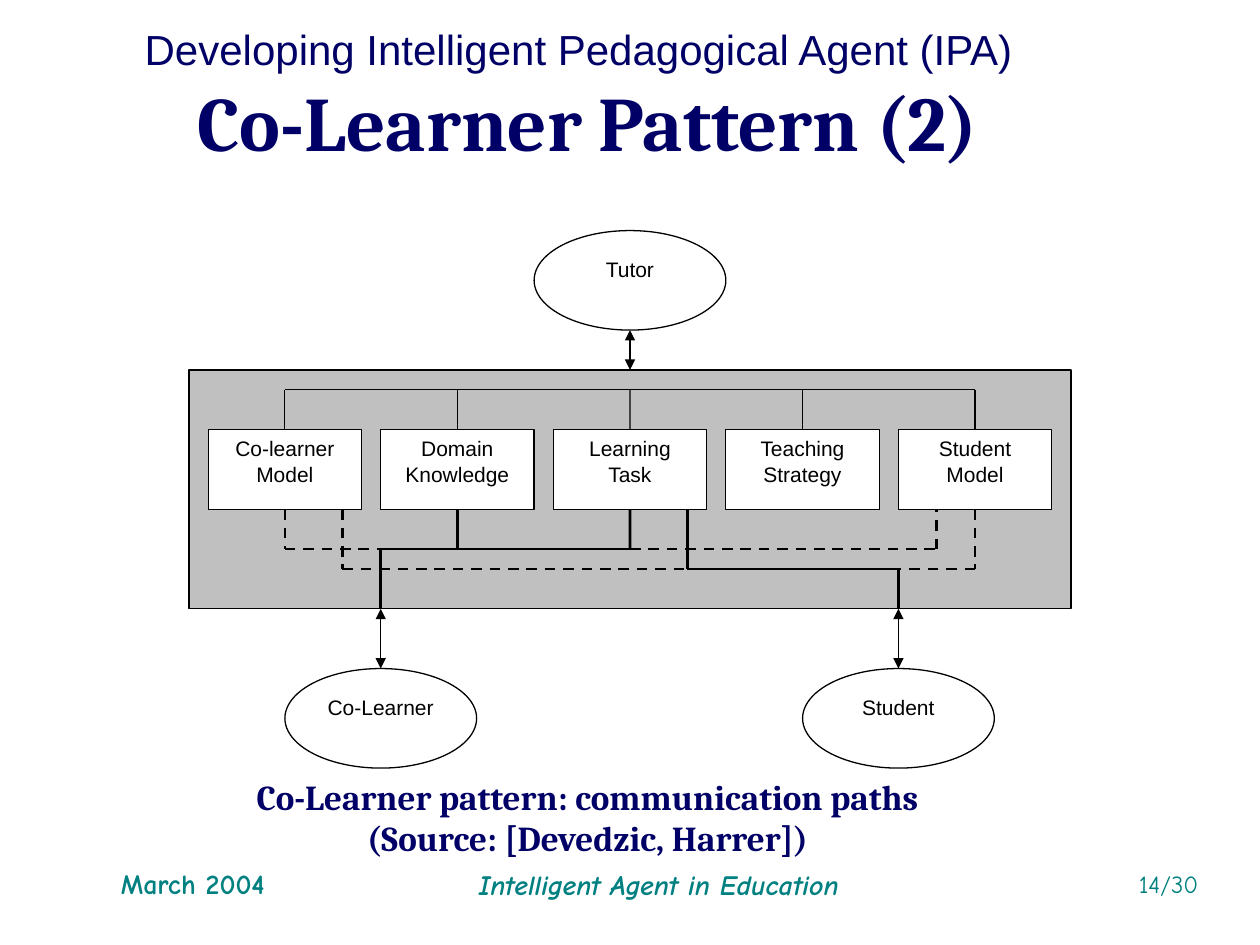
from dataclasses import dataclass
from itertools import pairwise
from typing import Optional

import pptx
import pptx.dml.color
import pptx.enum.dml
import pptx.enum.shapes
import pptx.enum.text
import pptx.util
from lxml import etree

RGBColor = pptx.dml.color.RGBColor
NAVY = RGBColor(0x00, 0x00, 0x66)
TEAL = RGBColor(0x00, 0x80, 0x80)
BLACK = RGBColor(0x00, 0x00, 0x00)
WHITE = RGBColor(0xFF, 0xFF, 0xFF)
GRAY = RGBColor(0xC0, 0xC0, 0xC0)

SHAPE = pptx.enum.shapes.MSO_SHAPE
ALIGN = pptx.enum.text.PP_ALIGN
ANCHOR = pptx.enum.text.MSO_ANCHOR
DRAWING_NS = "http://schemas.openxmlformats.org/drawingml/2006/main"

# Diagram grid: the panel is 46 columns wide, row 0 is the top of the tutor
GRID_LEFT, GRID_TOP = 1.5, 1.83
COL, ROW = 7 / 46, 0.158
BOX_TOP, BOX_BOTTOM, BOX_COLS, BOX_PITCH = 10, 14, 8, 9
PANEL_TOP, PANEL_BOTTOM, BUS = 7, 19, 8
ACTOR_COLS, ACTOR_ROWS, ACTOR_TOP = 10, 5, 22
COLEARNER, TUTOR, STUDENT = 10, 23, 37  # centre columns of the actors


@dataclass
class Style:
    size: float
    font: str = "Arial"
    color: RGBColor = BLACK
    bold: bool = False
    italic: bool = False
    align: ALIGN = ALIGN.CENTER


@dataclass
class Caption:
    lines: list[str]
    box: tuple[float, float, float, float]
    style: Style
    wrap: bool = True
    anchor: ANCHOR = ANCHOR.TOP
    spacing: Optional[float] = None
    gap: float = 0


@dataclass
class Wire:
    points: list[tuple[float, float]]
    dashed: bool = False
    width: float = 1.5
    arrows: bool = False
    begin: Optional[tuple] = None  # shape and connection site
    end: Optional[tuple] = None


def x(col: float) -> int:
    return pptx.util.Inches(GRID_LEFT + col * COL)


def y(row: float) -> int:
    return pptx.util.Inches(GRID_TOP + row * ROW)


def style_paragraph(p, style: Style) -> None:
    p.alignment = style.align
    f = p.font
    f.size, f.name = pptx.util.Pt(style.size), style.font
    f.bold, f.italic = style.bold, style.italic
    f.color.rgb = style.color


def add_caption(slide, cap: Caption) -> None:
    tf = slide.shapes.add_textbox(*map(pptx.util.Inches, cap.box)).text_frame
    tf.word_wrap, tf.vertical_anchor = cap.wrap, cap.anchor
    for i, line in enumerate(cap.lines):
        p = tf.add_paragraph() if i else tf.paragraphs[0]
        p.text = line
        style_paragraph(p, cap.style)
        p.line_spacing = cap.spacing
        p.space_before = pptx.util.Pt(cap.gap if i else 0)


def add_block(slide, kind, col: float, row: float, cols: float, rows: float,
              fill: RGBColor = WHITE, text: str = ""):
    sp = slide.shapes.add_shape(kind, x(col), y(row), x(col + cols) - x(col),
                                y(row + rows) - y(row))
    sp.shadow.inherit = False
    sp.fill.solid()
    sp.fill.fore_color.rgb = fill
    sp.line.color.rgb = BLACK
    sp.line.width = pptx.util.Pt(0.75)
    if text:
        tf = sp.text_frame
        tf.word_wrap, tf.vertical_anchor = True, ANCHOR.TOP
        tf.text = text
        style_paragraph(tf.paragraphs[0], Style(12))
    return sp


def add_actor(slide, name: str, center: int, row: int):
    sp = add_block(slide, SHAPE.OVAL, center - ACTOR_COLS / 2, row,
                   ACTOR_COLS, ACTOR_ROWS)
    box = (GRID_LEFT + (center - 4) * COL, GRID_TOP + (row + 1) * ROW,
           8 * COL, 3 * ROW)
    add_caption(slide, Caption([name], box, Style(12)))
    return sp


def add_wire(slide, wire: Wire) -> None:
    segments = list(pairwise(wire.points))
    for i, ((c1, r1), (c2, r2)) in enumerate(segments):
        line = slide.shapes.add_connector(
            pptx.enum.shapes.MSO_CONNECTOR.STRAIGHT, x(c1), y(r1), x(c2), y(r2))
        line.line.color.rgb = BLACK
        line.line.width = pptx.util.Pt(wire.width)
        if wire.dashed:
            line.line.dash_style = pptx.enum.dml.MSO_LINE.DASH
        if wire.arrows:
            for tag in ("headEnd", "tailEnd"):
                etree.SubElement(line.line._get_or_add_ln(),
                                 f"{{{DRAWING_NS}}}{tag}", type="triangle")
        etree.SubElement(line._element.spPr, f"{{{DRAWING_NS}}}effectLst")
        if wire.begin and i == 0:
            line.begin_connect(*wire.begin)
        if wire.end and i == len(segments) - 1:
            line.end_connect(*wire.end)


def main() -> None:
    prs = pptx.Presentation()
    prs.slide_width, prs.slide_height = map(pptx.util.Inches, (10, 7.5))
    slide = prs.slides.add_slide(prs.slide_layouts[6])

    # Headings, diagram caption and footer
    footer = "Comic Neue"
    for cap in (
        Caption(["Developing Intelligent Pedagogical Agent (IPA)"],
                (1.05, 0.14, 7.14, 0.5),
                Style(24, color=NAVY, align=ALIGN.LEFT), wrap=False),
        Caption(["Co-Learner Pattern (2)"], (0.42, 0.33, 8.5, 1.25),
                Style(44, "Cambria", NAVY, bold=True), anchor=ANCHOR.MIDDLE),
        Caption(["Co-Learner pattern: communication paths",
                 "(Source: [Devedzic, Harrer])"], (1.33, 6.17, 6.67, 0.75),
                Style(20, "Cambria", NAVY, bold=True), spacing=0.8, gap=4),
        Caption(["March 2004"], (0.49, 6.83, 2.08, 0.5),
                Style(16, footer, TEAL, bold=True)),
        Caption(["Intelligent Agent in Education"], (3.44, 6.84, 3.58, 0.5),
                Style(16, footer, TEAL, bold=True, italic=True)),
        Caption(["14/30"], (7.53, 6.85, 2.08, 0.5),
                Style(14, footer, TEAL, align=ALIGN.RIGHT)),
    ):
        add_caption(slide, cap)

    # Actors, panel and its component boxes
    add_actor(slide, "Tutor", TUTOR, 0)
    colearner = add_actor(slide, "Co-Learner", COLEARNER, ACTOR_TOP)
    student = add_actor(slide, "Student", STUDENT, ACTOR_TOP)
    panel = add_block(slide, SHAPE.RECTANGLE, 0, PANEL_TOP, 46,
                      PANEL_BOTTOM - PANEL_TOP, GRAY)
    names = ("Co-learner Model", "Domain Knowledge", "Learning Task",
             "Teaching Strategy", "Student Model")
    boxes = [add_block(slide, SHAPE.RECTANGLE, 1 + i * BOX_PITCH, BOX_TOP,
                       BOX_COLS, BOX_BOTTOM - BOX_TOP, text=name)
             for i, name in enumerate(names)]
    centers = [5 + i * BOX_PITCH for i in range(len(boxes))]

    # Bus above the boxes
    wires = [Wire([(centers[0], BUS), (centers[-1], BUS)], width=0.75)]
    wires += [Wire([(c, BUS), (c, BOX_TOP)], width=0.75, end=(box, 0))
              for c, box in zip(centers, boxes)]

    # Communication paths below the boxes
    upper, lower = 16, 17
    c_model, c_domain, c_task, _, c_student = centers
    wires += [
        Wire([(c_model, BOX_BOTTOM), (c_model, upper), (COLEARNER, upper)],
             dashed=True, begin=(boxes[0], 2)),
        Wire([(c_domain, BOX_BOTTOM), (c_domain, upper)], begin=(boxes[1], 2)),
        Wire([(c_task, BOX_BOTTOM), (c_task, upper), (COLEARNER, upper),
              (COLEARNER, PANEL_BOTTOM)], begin=(boxes[2], 2)),
        Wire([(c_task, upper), (39, upper), (39, BOX_BOTTOM)], dashed=True),
        Wire([(8, BOX_BOTTOM), (8, lower), (26, lower)], dashed=True),
        Wire([(26, BOX_BOTTOM), (26, lower), (STUDENT, lower),
              (STUDENT, PANEL_BOTTOM)]),
        Wire([(c_student, BOX_BOTTOM), (c_student, lower), (STUDENT, lower)],
             dashed=True, begin=(boxes[4], 2)),
    ]

    # Two-way arrows between actors and panel
    wires.append(Wire([(TUTOR, ACTOR_ROWS), (TUTOR, PANEL_TOP)], width=0.75,
                      arrows=True, end=(panel, 0)))
    wires += [Wire([(c, PANEL_BOTTOM), (c, ACTOR_TOP)], width=0.75,
                   arrows=True, end=(actor, 0))
              for c, actor in ((COLEARNER, colearner), (STUDENT, student))]
    for wire in wires:
        add_wire(slide, wire)

    prs.save("out.pptx")


if __name__ == "__main__":
    main()
